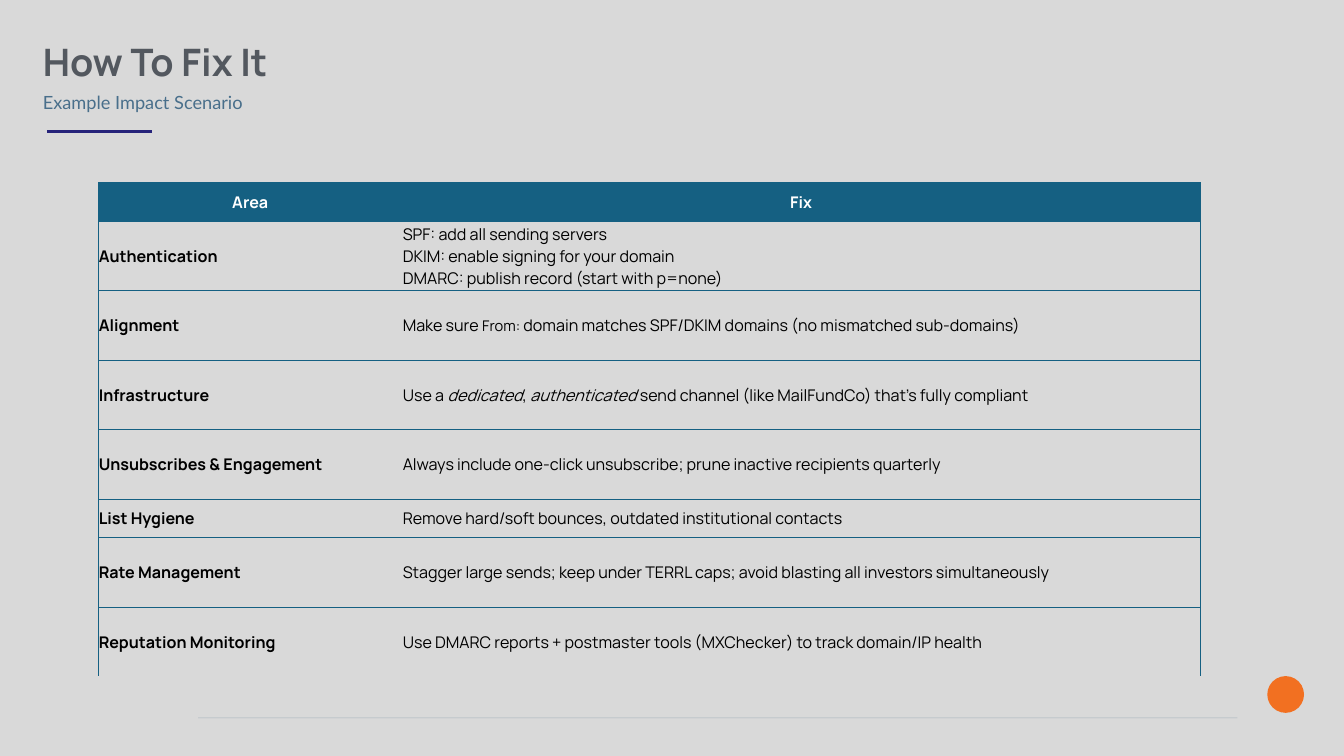
from lxml.etree import SubElement
from pptx import Presentation
from pptx.dml.color import RGBColor
from pptx.enum.shapes import MSO_CONNECTOR, MSO_SHAPE
from pptx.enum.text import MSO_ANCHOR, MSO_AUTO_SIZE, PP_ALIGN
from pptx.oxml.ns import qn
from pptx.util import Cm, Pt

BACKGROUND = RGBColor(0xD9, 0xD9, 0xD9)
ORANGE = RGBColor(0xF2, 0x70, 0x21)
SLATE = RGBColor(0x49, 0x6F, 0x8B)
INDIGO = RGBColor(0x26, 0x23, 0x7A)
GREY = RGBColor(0x53, 0x58, 0x5F)
TEAL = RGBColor(0x15, 0x60, 0x82)
WHITE = RGBColor(0xFF, 0xFF, 0xFF)
BLACK = RGBColor(0, 0, 0)

# Each fix is a list of lines; a line is a list of (text, size, italic) runs.
FIXES = [
    ("Authentication", [
        [("SPF: add all sending servers", 23, False)],
        [("DKIM: enable signing for your domain", 23, False)],
        [("DMARC: publish record (start with p=none)", 23, False)]]),
    ("Alignment", [[
        ("Make sure ", 23, False), ("From:", 21, False),
        (" domain matches SPF/DKIM domains (no mismatched sub-domains)", 23, False)]]),
    ("Infrastructure", [[
        ("Use a ", 23, False), ("dedicated", 23, True), (", ", 23, False),
        ("authenticated", 23, True),
        (" send channel (like MailFundCo) that’s fully compliant", 23, False)]]),
    ("Unsubscribes & Engagement", [[
        ("Always include one-click unsubscribe; prune inactive recipients quarterly", 23, False)]]),
    ("List Hygiene", [[
        ("Remove hard/soft bounces, outdated institutional contacts", 23, False)]]),
    ("Rate Management", [[
        ("Stagger large sends; keep under TERRL caps; avoid blasting all investors simultaneously",
         23, False)]]),
    ("Reputation Monitoring", [[
        ("Use DMARC reports + postmaster tools (MXChecker) to track domain/IP health", 23, False)]]),
]
ROWS = [("Area", [[("Fix", 23, False)]])] + FIXES
SHORT_ROWS = ("Area", "List Hygiene")


def add_run(paragraph, text, size, color, bold=False, italic=False, font="Manrope"):
    run = paragraph.add_run()
    run.text = text
    run.font.name = font
    run.font.size = Pt(size)
    run.font.bold = bold
    run.font.italic = italic
    run.font.color.rgb = color


def set_borders(cell, visible):
    """Draw the sides named in visible (from L, R, T, B) and clear the others."""
    properties = cell._tc.get_or_add_tcPr()
    for position, side in enumerate("LRTB"):
        border = SubElement(properties, qn(f"a:ln{side}"), w=str(Pt(0.5)))
        if side in visible:
            fill = SubElement(border, qn("a:solidFill"))
            SubElement(fill, qn("a:srgbClr"), val=str(TEAL))
        else:
            SubElement(border, qn("a:noFill"))
        properties.insert(position, border)


prs = Presentation()
prs.slide_width = Cm(67.74)
prs.slide_height = Cm(38.1)
slide = prs.slides.add_slide(prs.slide_layouts[5])
slide.background.fill.solid()
slide.background.fill.fore_color.rgb = BACKGROUND

# Footer dot and the two rules
dot = slide.shapes.add_shape(MSO_SHAPE.OVAL, Cm(63.91), Cm(34.11), Cm(1.78), Cm(1.78))
dot.shadow.inherit = False
dot.fill.solid()
dot.fill.fore_color.rgb = ORANGE
dot.line.color.rgb = ORANGE
dot.line.width = Pt(2)

for left, right, y, color, width, opacity in [
    (9.98, 62.36, 36.17, SLATE, 2, 12),
    (2.36, 7.65, 6.63, INDIGO, 5, 100),
]:
    rule = slide.shapes.add_connector(MSO_CONNECTOR.STRAIGHT, Cm(left), Cm(y), Cm(right), Cm(y))
    rule.line.color.rgb = color
    rule.line.width = Pt(width)
    if opacity < 100:
        rule_color = rule.line._ln.find(qn("a:solidFill")).find(qn("a:srgbClr"))
        SubElement(rule_color, qn("a:alpha"), val=str(opacity * 1000))
    SubElement(rule._element.spPr, qn("a:effectLst"))

# Title and subtitle
title = slide.shapes.title
title.left, title.top, title.width, title.height = Cm(2.01), Cm(1.78), Cm(12.27), Cm(2.59)
subtitle = slide.shapes.add_textbox(Cm(2.01), Cm(4.47), Cm(10.46), Cm(1.4))
for heading, text, size, color, bold, font in [
    (title, "How To Fix It", 54, GREY, True, "Manrope"),
    (subtitle, "Example Impact Scenario", 26, SLATE, False, "Lato"),
]:
    frame = heading.text_frame
    frame.word_wrap = False
    frame.auto_size = MSO_AUTO_SIZE.SHAPE_TO_FIT_TEXT
    frame.vertical_anchor = MSO_ANCHOR.MIDDLE
    frame.margin_left = frame.margin_right = frame.margin_top = frame.margin_bottom = Cm(0.15)
    frame.paragraphs[0].alignment = PP_ALIGN.LEFT
    add_run(frame.paragraphs[0], text, size, color, bold, font=font)

# Table of fixes
table = slide.shapes.add_table(
    len(ROWS), 2, Cm(4.95), Cm(9.19), Cm(55.53), Cm(24.9)).table
table.horz_banding = False
table.columns[0].width = Cm(15.32)
table.columns[1].width = Cm(40.21)

for row, (area, fix) in enumerate(ROWS):
    table.rows[row].height = Cm(1.95 if area in SHORT_ROWS else 3.5)
    is_header = row == 0
    for column, lines in enumerate([[[(area, 23, False)]], fix]):
        cell = table.cell(row, column)
        cell.vertical_anchor = MSO_ANCHOR.MIDDLE
        cell.margin_left = cell.margin_right = cell.margin_top = Cm(0.03)
        cell.margin_bottom = 0
        if is_header:
            cell.fill.solid()
            cell.fill.fore_color.rgb = TEAL
        else:
            cell.fill.background()
        sides = "LT" if column == 0 else "RT"
        set_borders(cell, sides if row == len(ROWS) - 1 else sides + "B")

        paragraph = cell.text_frame.paragraphs[0]
        paragraph.alignment = PP_ALIGN.CENTER if is_header else PP_ALIGN.LEFT
        for number, line in enumerate(lines):
            if number:
                paragraph.add_line_break()
            for text, size, italic in line:
                add_run(paragraph, text, size, WHITE if is_header else BLACK,
                        is_header or column == 0, italic)

prs.save("out.pptx")
